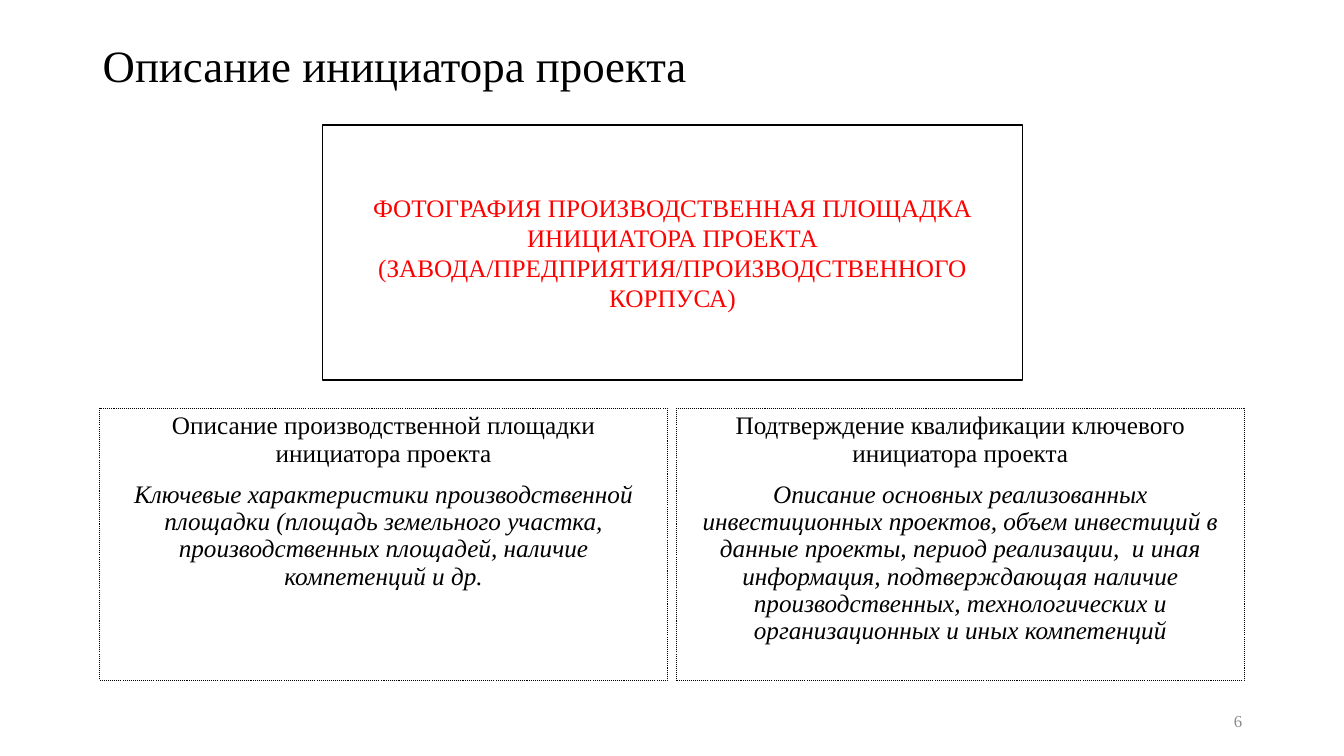
from dataclasses import dataclass

from pptx import Presentation
from pptx.dml.color import RGBColor
from pptx.enum.dml import MSO_LINE
from pptx.enum.shapes import MSO_SHAPE
from pptx.enum.text import MSO_ANCHOR, PP_ALIGN
from pptx.util import Inches, Pt


@dataclass(frozen=True)
class Theme:
    font: str = "Times New Roman"
    ink: RGBColor = RGBColor(0, 0, 0)
    red: RGBColor = RGBColor(0xFF, 0, 0)
    gray: RGBColor = RGBColor(0x8C, 0x8C, 0x8C)
    title: int = 32
    body: int = 18
    small: int = 12


THEME = Theme()


@dataclass(frozen=True)
class Line:
    text: str
    italic: bool = False


@dataclass(frozen=True)
class Block:
    left: float
    top: float
    width: float
    height: float
    lines: tuple[Line, ...]
    size: int = THEME.body
    color: RGBColor = THEME.ink
    align: PP_ALIGN = PP_ALIGN.CENTER
    anchor: MSO_ANCHOR = MSO_ANCHOR.MIDDLE
    spacing: float = 1.0
    before: int = 0
    border: float = 0
    dotted: bool = False


def draw(slide, block: Block) -> None:
    """Draw a bordered rectangle, or a plain text box if there is no border."""
    place = [Inches(v) for v in (block.left, block.top, block.width, block.height)]
    if block.border:
        shape = slide.shapes.add_shape(MSO_SHAPE.RECTANGLE, *place)
        shape.shadow.inherit = False
        shape.fill.background()
        shape.line.color.rgb = THEME.ink
        shape.line.width = Pt(block.border)
        if block.dotted:
            shape.line.dash_style = MSO_LINE.ROUND_DOT
    else:
        shape = slide.shapes.add_textbox(*place)
    write(shape.text_frame, block)


def write(frame, block: Block) -> None:
    """Fill a text frame with the lines of a block."""
    frame.word_wrap = True
    frame.vertical_anchor = block.anchor
    for i, line in enumerate(block.lines):
        para = frame.add_paragraph() if i else frame.paragraphs[0]
        para.text = line.text
        para.alignment = block.align
        para.line_spacing = block.spacing
        para.space_before = Pt(block.before)
        para.font.name = THEME.font
        para.font.size = Pt(block.size)
        para.font.italic = line.italic
        para.font.color.rgb = block.color


# Slide wording
TITLE = Line("Описание инициатора проекта")
PHOTO = (
    Line("ФОТОГРАФИЯ ПРОИЗВОДСТВЕННАЯ ПЛОЩАДКА ИНИЦИАТОРА ПРОЕКТА"),
    Line("(ЗАВОДА/ПРЕДПРИЯТИЯ/ПРОИЗВОДСТВЕННОГО КОРПУСА)"),
)
PANELS = (
    (
        Line("Описание производственной площадки инициатора проекта"),
        Line("Ключевые характеристики производственной площадки "
             "(площадь земельного участка, производственных площадей, "
             "наличие компетенций и др.", italic=True),
    ),
    (
        Line("Подтверждение квалификации ключевого инициатора проекта"),
        Line("Описание основных реализованных инвестиционных проектов, "
             "объем инвестиций в данные проекты, период реализации,  и иная "
             "информация, подтверждающая наличие производственных, "
             "технологических и организационных и иных компетенций", italic=True),
    ),
)


def main() -> None:
    deck = Presentation()
    deck.slide_width, deck.slide_height = Inches(13.33), Inches(7.5)
    slide = deck.slides.add_slide(deck.slide_layouts[6])

    # Title
    draw(slide, Block(0.92, 0.4, 11.5, 0.55, (TITLE,), size=THEME.title,
                      align=PP_ALIGN.LEFT, spacing=0.9))

    # Two dotted panels side by side
    left, width, gap = 0.99, 5.63, 0.09
    for i, lines in enumerate(PANELS):
        draw(slide, Block(left + i * (width + gap), 4.05, width, 2.7, lines,
                          anchor=MSO_ANCHOR.TOP, spacing=0.9, before=10,
                          border=0.75, dotted=True))

    # Photo frame
    draw(slide, Block(3.2, 1.24, 6.94, 2.53, PHOTO, color=THEME.red, border=1))

    # Page number
    draw(slide, Block(9.42, 6.95, 3, 0.4, (Line("6"),), size=THEME.small,
                      color=THEME.gray, align=PP_ALIGN.RIGHT))

    deck.save("out.pptx")


if __name__ == "__main__":
    main()
